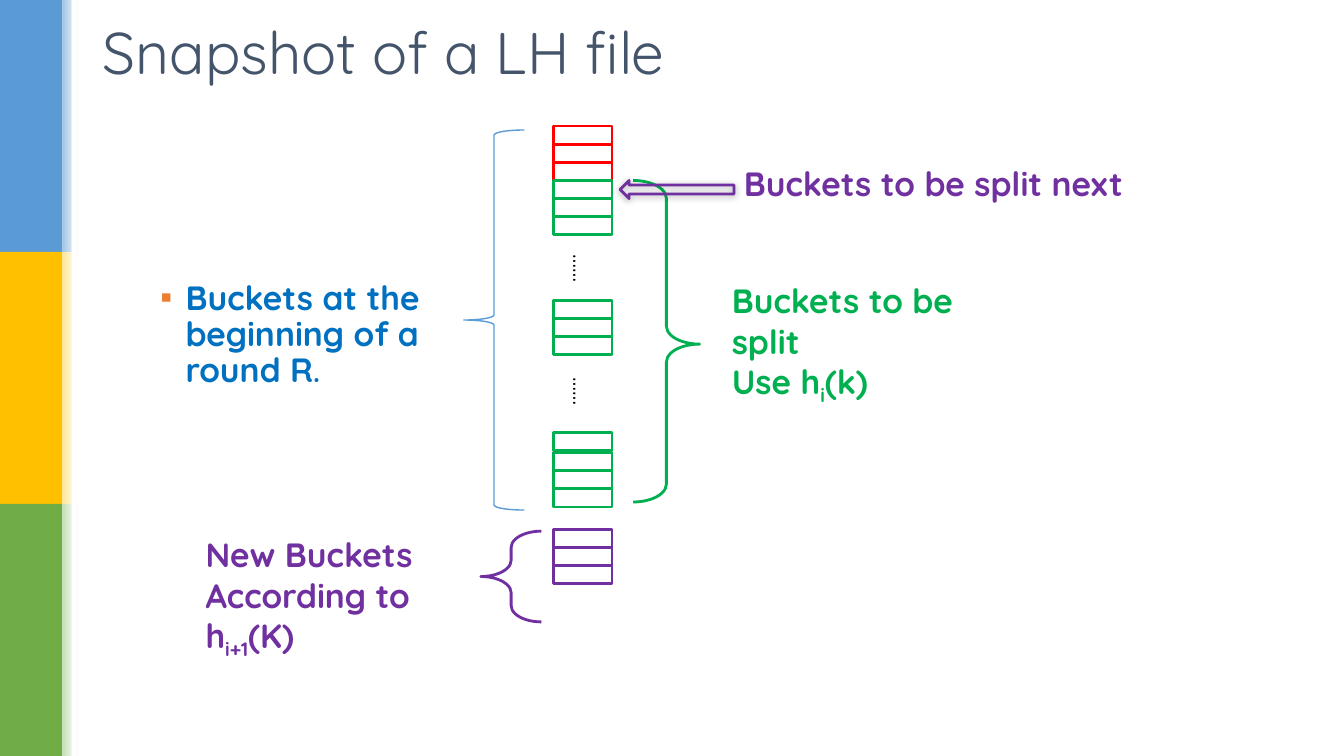
from dataclasses import dataclass

from lxml.etree import SubElement
from pptx import Presentation
from pptx.dml.color import RGBColor
from pptx.enum.shapes import MSO_SHAPE
from pptx.enum.text import MSO_ANCHOR, MSO_AUTO_SIZE, PP_ALIGN
from pptx.oxml.ns import qn
from pptx.util import Inches, Pt


@dataclass(frozen=True)
class Theme:
    font: str = "Quicksand"
    title: str = "44546A"
    bullet: str = "ED7D31"
    body: str = "0070C0"
    brace: str = "5B9BD5"
    split: str = "FF0000"
    unsplit: str = "00B050"
    new: str = "7030A0"
    black: str = "000000"
    white: str = "FFFFFF"
    bands: tuple = (("5B9BD5", "9DC3E6"), ("FFC000", "FFE699"), ("70AD47", "C5E0B4"))
    title_size: int = 42
    label_size: int = 24
    period_size: int = 20
    dots_size: int = 18


THEME = Theme()
BUCKET_LEFT, BUCKET_WIDTH, BUCKET_HEIGHT = 5.49, 0.58, 0.18
BAND_HEIGHT = 2.5


def color(value):
    return RGBColor.from_string(value)


def place(shape, left, top, width, height):
    shape.left, shape.top = Inches(left), Inches(top)
    shape.width, shape.height = Inches(width), Inches(height)


def add_plain_shape(slide, kind, left, top, width, height):
    shape = slide.shapes.add_shape(kind, Inches(left), Inches(top), Inches(width), Inches(height))
    shape.shadow.inherit = False
    shape.line.fill.background()
    return shape


def add_filled(slide, left, top, width, height, fill):
    shape = add_plain_shape(slide, MSO_SHAPE.RECTANGLE, left, top, width, height)
    shape.fill.solid()
    shape.fill.fore_color.rgb = color(fill)


def add_faded(slide, left, top, width, height, start):
    shape = add_plain_shape(slide, MSO_SHAPE.RECTANGLE, left, top, width, height)
    shape.fill.gradient()
    shape.fill.gradient_angle = 0
    for stop, value in zip(shape.fill.gradient_stops, (start, THEME.white)):
        stop.color.rgb = color(value)


def add_outline(slide, kind, left, top, width, height, line, weight=2):
    shape = add_plain_shape(slide, kind, left, top, width, height)
    shape.fill.background()
    shape.line.color.rgb = color(line)
    shape.line.width = Pt(weight)
    return shape


def add_brace(slide, kind, left, top, width, height, line, weight=2, curve=0.269, middle=0.5):
    brace = add_outline(slide, kind, left, top, width, height, line, weight)
    brace.adjustments[0] = curve
    brace.adjustments[1] = middle


def add_buckets(slide, top, count, line):
    for index in range(count):
        add_outline(slide, MSO_SHAPE.RECTANGLE, BUCKET_LEFT, top + index * BUCKET_HEIGHT,
                    BUCKET_WIDTH, BUCKET_HEIGHT, line)


def add_run(paragraph, text, size, fill, bold=False, baseline=None):
    run = paragraph.add_run()
    run.text = text
    run.font.name = THEME.font
    run.font.size = Pt(size)
    run.font.bold = bold
    run.font.color.rgb = color(fill)
    if baseline:
        run.font._element.set("baseline", str(baseline * 1000))


def add_text_box(slide, left, top, width, height):
    box = slide.shapes.add_textbox(Inches(left), Inches(top), Inches(width), Inches(height))
    box.text_frame.word_wrap = True
    return box


def add_label(slide, left, top, width, height, fill, lines):
    frame = add_text_box(slide, left, top, width, height).text_frame
    frame.auto_size = MSO_AUTO_SIZE.SHAPE_TO_FIT_TEXT
    for index, line in enumerate(lines):
        paragraph = frame.add_paragraph() if index else frame.paragraphs[0]
        for text, baseline in line:
            add_run(paragraph, text, THEME.label_size, fill, True, baseline)


def add_dots(slide, top):
    box = add_text_box(slide, 5.29, top, 0.99, 0.32)
    box.rotation = 90
    box.text_frame.vertical_anchor = MSO_ANCHOR.MIDDLE
    paragraph = box.text_frame.paragraphs[0]
    paragraph.alignment = PP_ALIGN.CENTER
    add_run(paragraph, "……", THEME.dots_size, THEME.black)


def add_split_arrow(slide):
    arrow = add_outline(slide, MSO_SHAPE.LEFT_ARROW, 6.15, 1.79, 1.13, 0.18, THEME.new)
    effects = arrow._element.spPr.find(qn("a:effectLst"))
    shadow = SubElement(effects, qn("a:outerShdw"), blurRad=str(Pt(5)), dist=str(Pt(1)),
                        dir="5400000", rotWithShape="0")
    shade = SubElement(shadow, qn("a:srgbClr"), val=THEME.black)
    SubElement(shade, qn("a:alpha"), val="32000")


def add_side_bands(slide):
    for index, (solid, pale) in enumerate(THEME.bands):
        add_filled(slide, 0, index * BAND_HEIGHT, 0.62, BAND_HEIGHT, solid)
        add_faded(slide, 0.62, index * BAND_HEIGHT, 0.16, BAND_HEIGHT, pale)
    add_filled(slide, 0.71, 0, 0.05, 7.5, THEME.white)


def fill_title(slide):
    title = slide.shapes.title
    place(title, 0.92, 0.12, 11.5, 0.86)
    frame = title.text_frame
    frame.auto_size = MSO_AUTO_SIZE.NONE
    frame.vertical_anchor = MSO_ANCHOR.MIDDLE
    paragraph = frame.paragraphs[0]
    paragraph.alignment = PP_ALIGN.LEFT
    paragraph.line_spacing = 0.9
    add_run(paragraph, "Snapshot of a LH file", THEME.title_size, THEME.title)


def fill_body(slide):
    body = slide.placeholders[1]
    place(body, 1.49, 2.74, 3.1, 1.24)
    body.text_frame.auto_size = MSO_AUTO_SIZE.NONE
    paragraph = body.text_frame.paragraphs[0]
    properties = paragraph._p.get_or_add_pPr()
    properties.set("marL", str(Inches(0.25)))
    properties.set("indent", str(Inches(-0.25)))
    bullet_color = SubElement(properties, qn("a:buClr"))
    SubElement(bullet_color, qn("a:srgbClr"), val=THEME.bullet)
    SubElement(properties, qn("a:buChar"), char="▪")
    paragraph.line_spacing = 0.9
    paragraph.space_before = Pt(0)
    add_run(paragraph, "Buckets at the beginning of a round R", THEME.label_size, THEME.body, True)
    add_run(paragraph, ".", THEME.period_size, THEME.body, True)


def main():
    presentation = Presentation()
    presentation.slide_width, presentation.slide_height = Inches(13.33), Inches(7.5)
    slide = presentation.slides.add_slide(presentation.slide_layouts[1])
    add_side_bands(slide)
    fill_title(slide)
    fill_body(slide)

    for top, count, line in ((1.25, 3, THEME.split), (1.79, 3, THEME.unsplit),
                             (2.98, 3, THEME.unsplit), (4.29, 1, THEME.unsplit),
                             (4.49, 3, THEME.unsplit), (5.25, 3, THEME.new)):
        add_buckets(slide, top, count, line)
    for top in (2.5, 3.72):
        add_dots(slide, top)

    add_brace(slide, MSO_SHAPE.LEFT_BRACE, 4.6, 1.29, 0.6, 3.77, THEME.brace, 1, 0.083)
    add_brace(slide, MSO_SHAPE.RIGHT_BRACE, 6.28, 1.79, 0.66, 3.19, THEME.unsplit, middle=0.509)
    add_brace(slide, MSO_SHAPE.LEFT_BRACE, 4.77, 5.27, 0.6, 0.9, THEME.new)

    add_label(slide, 7.16, 2.73, 3.13, 0.91, THEME.unsplit,
              ((("Buckets to be split", None),),
               (("Use h", None), ("i", -25), ("(k)", None))))
    add_label(slide, 1.94, 5.25, 3.13, 1.31, THEME.new,
              ((("New Buckets", None),),
               (("According to h", None), ("i+1", -25), ("(K)", None))))
    add_label(slide, 7.28, 1.57, 4.26, 0.5, THEME.new,
              ((("Buckets to be split next", None),),))
    add_split_arrow(slide)
    presentation.save("out.pptx")


if __name__ == "__main__":
    main()
